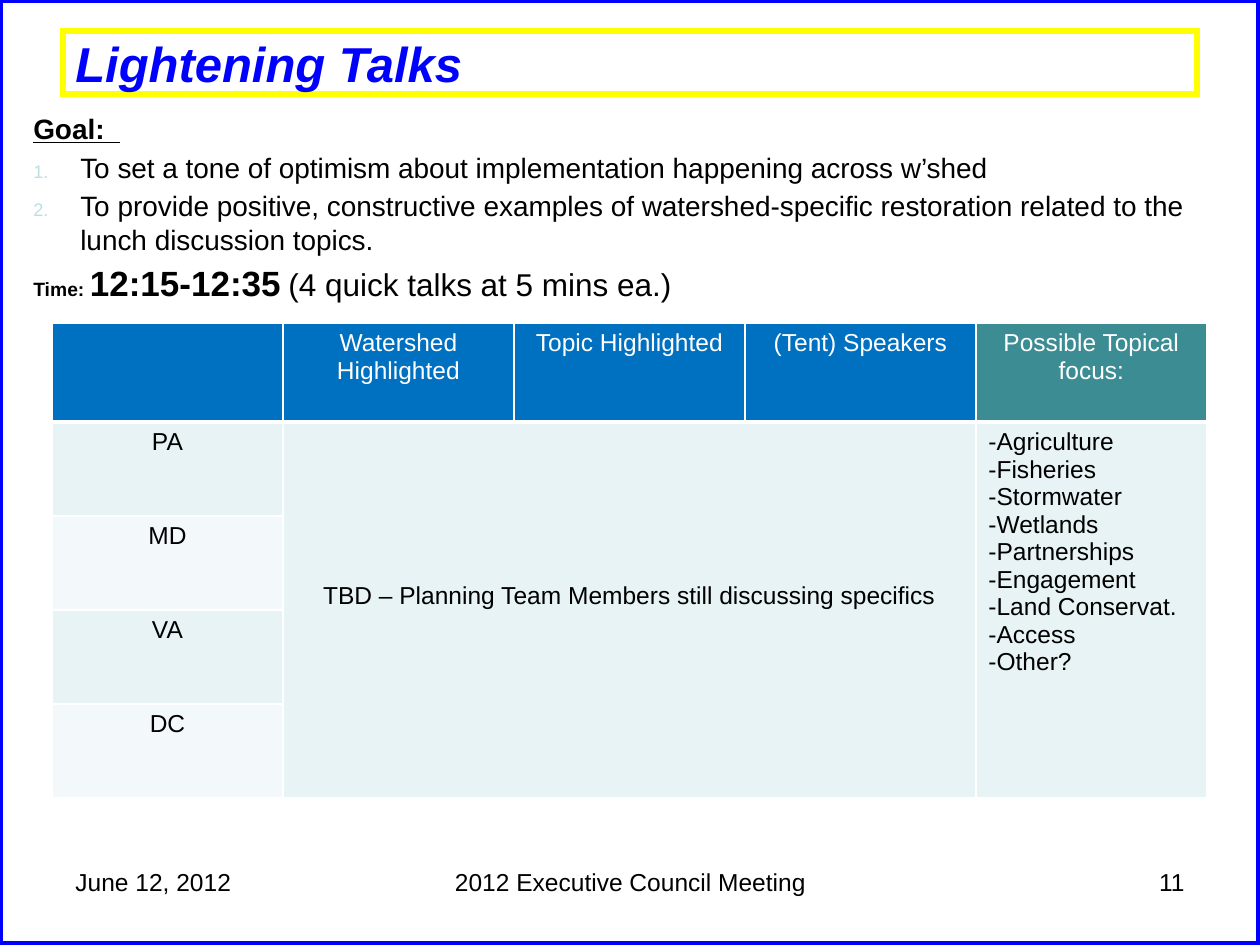
from lxml import etree
from pptx import Presentation
from pptx.dml.color import RGBColor
from pptx.enum.shapes import MSO_SHAPE
from pptx.enum.text import MSO_ANCHOR, PP_ALIGN
from pptx.oxml.ns import qn
from pptx.util import Emu, Pt

LEFT, CENTER, RIGHT = PP_ALIGN.LEFT, PP_ALIGN.CENTER, PP_ALIGN.RIGHT
TOP, MIDDLE = MSO_ANCHOR.TOP, MSO_ANCHOR.MIDDLE
RECTANGLE = MSO_SHAPE.RECTANGLE

BLACK, WHITE, BLUE, YELLOW = "000000", "FFFFFF", "0000FF", "FFFF00"
HEADER_BLUE, HEADER_TEAL = "0070C0", "3C8C93"
BAND_DARK, BAND_LIGHT, NUMBER_TINT = "E7F3F4", "F3F9FA", "BBE0E3"


def px(length):
    """Turn whole pixels, 126 to the inch, into EMU."""
    return Emu(round(length * 914400 / 126))


def rgb(color):
    return RGBColor.from_string(color)


def add_xml(parent, tag, **attributes):
    values = {name: str(value) for name, value in attributes.items()}
    return etree.SubElement(parent, qn(tag), values)


def add_text(paragraph, text, size=14, color=BLACK, bold=False, italic=False,
             underline=False, align=LEFT):
    paragraph.alignment = align
    run = paragraph.add_run()
    run.text = text
    font = run.font
    font.name, font.size, font.color.rgb = "Arial", Pt(size), rgb(color)
    font.bold, font.italic, font.underline = bold, italic, underline


def next_paragraph(frame):
    """Give the first paragraph while it is empty, then new ones."""
    first = frame.paragraphs[0]
    return first if not first.runs else frame.add_paragraph()


def set_indent(paragraph, margin, hanging=0):
    properties = paragraph._p.get_or_add_pPr()
    properties.set("marL", str(px(margin)))
    properties.set("indent", str(-px(hanging)))
    return properties


def number_paragraph(properties):
    color = add_xml(properties, "a:buClr")
    add_xml(color, "a:srgbClr", val=NUMBER_TINT)
    add_xml(properties, "a:buSzPct", val=65000)
    add_xml(properties, "a:buFont", typeface="Arial")
    add_xml(properties, "a:buAutoNum", type="arabicPeriod")


def dash_paragraph(properties):
    add_xml(properties, "a:buFont", typeface="Arial")
    add_xml(properties, "a:buChar", char="-")


def set_borders(cell, bottom):
    properties = cell._tc.get_or_add_tcPr()
    for side, width in (("L", 1), ("R", 1), ("T", 1), ("B", bottom)):
        line = add_xml(properties, f"a:ln{side}", w=Pt(width))
        add_xml(add_xml(line, "a:solidFill"), "a:srgbClr", val=WHITE)


class SlideBuilder:
    """Holds the slide being built and adds each kind of element."""

    def __init__(self, slide):
        self.slide = slide

    def frame(self, x, y, width, height, color, weight):
        """Add an unfilled rectangle with a sharp-cornered outline."""
        shape = self.slide.shapes.add_shape(
            RECTANGLE, px(x), px(y), px(width), px(height))
        shape.shadow.inherit = False
        shape.fill.background()
        shape.line.color.rgb = rgb(color)
        shape.line.width = Pt(weight)
        add_xml(shape.line._get_or_add_ln(), "a:miter", lim=800000)
        return shape

    def text_box(self, x, y, width, height):
        box = self.slide.shapes.add_textbox(
            px(x), px(y), px(width), px(height))
        box.text_frame.word_wrap = True
        return box.text_frame

    def table(self, x, y, widths, heights):
        shape = self.slide.shapes.add_table(
            len(heights), len(widths), px(x), px(y),
            px(sum(widths)), px(sum(heights)))
        table = shape.table
        table.first_row = table.horz_banding = False
        for column, width in zip(table.columns, widths):
            column.width = px(width)
        for row, height in zip(table.rows, heights):
            row.height = px(height)
        return table

    def cell(self, cell, fill, text="", color=BLACK, bottom=1):
        set_borders(cell, bottom)
        cell.fill.solid()
        cell.fill.fore_color.rgb = rgb(fill)
        cell.vertical_anchor = TOP
        if text:
            add_text(cell.text_frame.paragraphs[0], text, color=color,
                     align=CENTER)


def add_agenda(builder):
    agenda = builder.text_box(21, 105, 1207, 210)
    goal = next_paragraph(agenda)
    set_indent(goal, 47, 47)
    add_text(goal, "Goal:  ", size=16, bold=True, underline=True)
    for aim in (
        "To set a tone of optimism about implementation happening across w’shed",
        "To provide positive, constructive examples of watershed-specific "
        "restoration related to the lunch discussion topics.",
    ):
        paragraph = next_paragraph(agenda)
        add_text(paragraph, aim, size=16)
        paragraph.space_before = Pt(3)
        number_paragraph(set_indent(paragraph, 47, 47))

    time = next_paragraph(agenda)
    set_indent(time, 66, 66)
    add_text(time, "Time: ", size=11, bold=True)
    add_text(time, "12:15-12:35\t", size=20, bold=True)
    add_text(time, "(4 quick talks at 5 mins ea.)", size=18)
    time.space_before = Pt(3)


def add_talks_table(builder):
    headers = ("", "Watershed Highlighted", "Topic Highlighted",
               "(Tent) Speakers", "Possible Topical focus:")
    states = ("PA", "MD", "VA", "DC")
    topics = ("Agriculture", "Fisheries", "Stormwater", "Wetlands",
              "Partnerships", "Engagement", "Land Conservat.", "Access",
              "Other?")
    last = len(headers) - 1
    talks = builder.table(52, 323, [231] * len(headers),
                          [99] + [94] * len(states))

    for column, header in enumerate(headers):
        fill = HEADER_TEAL if column == last else HEADER_BLUE
        builder.cell(talks.cell(0, column), fill, header, WHITE, bottom=3)
    for row, state in enumerate(states, start=1):
        builder.cell(talks.cell(row, 0),
                     BAND_DARK if row % 2 else BAND_LIGHT, state)
        for column in range(1, last + 1):
            builder.cell(talks.cell(row, column), BAND_DARK)

    pending, focus = talks.cell(1, 1), talks.cell(1, last)
    pending.merge(talks.cell(len(states), last - 1))
    focus.merge(talks.cell(len(states), last))
    pending.vertical_anchor = MIDDLE
    pending.margin_bottom = px(34)
    add_text(pending.text_frame.paragraphs[0],
             "TBD – Planning Team Members still discussing specifics",
             align=CENTER)
    for topic in topics:
        paragraph = next_paragraph(focus.text_frame)
        add_text(paragraph, topic)
        dash_paragraph(set_indent(paragraph, 0))


def main():
    deck = Presentation()
    deck.slide_width, deck.slide_height = px(1260), px(945)
    builder = SlideBuilder(deck.slides.add_slide(deck.slide_layouts[6]))

    builder.frame(0, 0, 1260, 945, BLUE, 4)
    for x, width, text, align in (
        (63, 294, "June 12, 2012", LEFT),
        (431, 399, "2012 Executive Council Meeting", CENTER),
        (903, 294, "11", RIGHT),
    ):
        footer = builder.text_box(x, 861, width, 66)
        add_text(footer.paragraphs[0], text, align=align)

    add_agenda(builder)
    add_talks_table(builder)

    title = builder.frame(63, 31, 1134, 63, YELLOW, 3).text_frame
    title.word_wrap = True
    title.vertical_anchor = MIDDLE
    add_text(title.paragraphs[0], "Lightening Talks", size=28, color=BLUE,
             bold=True, italic=True)
    deck.save("out.pptx")


if __name__ == "__main__":
    main()
